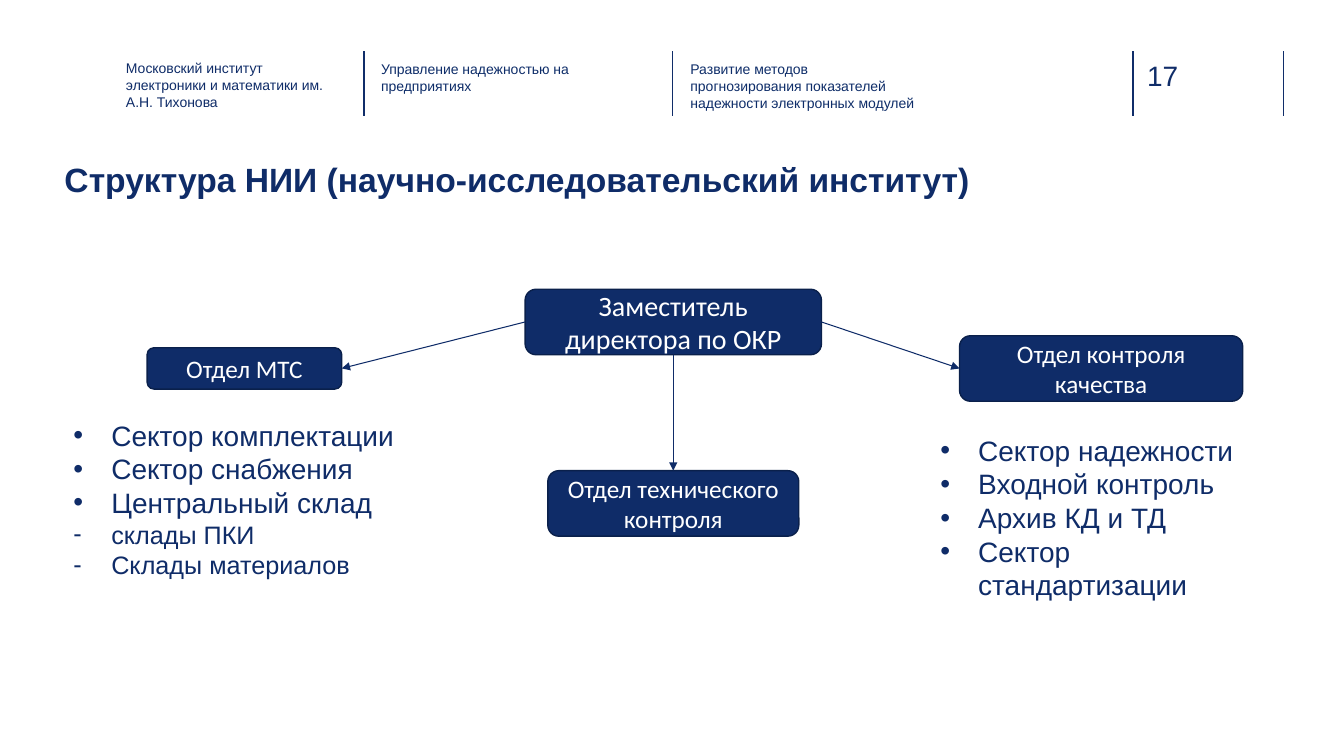
"""Build a slide with the structure of a research institute."""
from dataclasses import dataclass

from lxml import etree
from pptx import Presentation
from pptx import util as u
from pptx.dml import color
from pptx.enum import shapes, text
from pptx.oxml import ns

NAVY, RULE, HEAD, EDGE, WHITE = "0F2C68", "102D69", "0E2D69", "0A204B", "FFFFFF"
HANG = 27


@dataclass
class Area:
    left: float
    top: float
    width: float
    height: float

    def points(self) -> list:
        return [u.Pt(n) for n in (self.left, self.top, self.width, self.height)]


@dataclass
class Label:
    area: Area
    words: str
    size: float
    tint: str = NAVY
    bold: bool = False


@dataclass
class Unit:
    area: Area
    words: str
    size: float = 18


@dataclass
class Item:
    words: str
    mark: str = "•"
    size: float = 20


@dataclass
class Roster:
    area: Area
    items: list


@dataclass
class Link:
    goal: int
    start: int
    end: int


LABELS = [
    Label(Area(819.4, 41.8, 52.6, 24.5), "17", 20, RULE),
    Label(Area(46.1, 113.8, 859.7, 55.4),
          "Структура НИИ (научно-исследовательский институт)", 24, bold=True),
    Label(Area(90, 42.5, 149.8, 32.4),
          "Московский институт электроники и математики им. А.Н. Тихонова", 10),
    Label(Area(272.2, 43.2, 162.7, 32.4),
          "Управление надежностью на предприятиях", 10, HEAD),
    Label(Area(493.2, 43.2, 162.7, 32.4),
          "Развитие методов прогнозирования показателей надежности "
          "электронных модулей", 10, HEAD),
]
UNITS = [
    Unit(Area(375.1, 206.6, 211.7, 46.8), "Заместитель директора по ОКР", 20),
    Unit(Area(391.3, 336.2, 179.3, 46.8), "Отдел технического контроля"),
    Unit(Area(685.4, 239.8, 202.3, 46.8), "Отдел контроля качества"),
    Unit(Area(105.1, 248.4, 139, 29.5), "Отдел МТС"),
]
LINKS = [Link(3, 1, 3), Link(1, 2, 0), Link(2, 3, 1)]
ROSTERS = [
    Roster(Area(664.6, 306, 257.8, 128.2), [
        Item("Сектор надежности"), Item("Входной контроль"),
        Item("Архив КД и ТД"), Item("Сектор стандартизации")]),
    Roster(Area(45.4, 295.2, 257.8, 128.2), [
        Item("Сектор комплектации"), Item("Сектор снабжения"),
        Item("Центральный склад"), Item("склады ПКИ", "-", 18),
        Item("Склады материалов", "-", 18)]),
]


def apply(target, values: dict) -> None:
    for name, value in values.items():
        setattr(target, name, value)


def paint(fmt, tint: str) -> None:
    fmt.rgb = color.RGBColor.from_string(tint)


def add(parent, tag: str, **attrs: str):
    return etree.SubElement(parent, ns.qn(tag), attrs)


def write(para, words: str, size: float, tint: str,
          face: str = "Arial", bold: bool = False) -> None:
    run = para.add_run()
    run.text = words
    apply(run.font, {"name": face, "size": u.Pt(size), "bold": bold})
    paint(run.font.color, tint)


def frame(shape, side: float, edge: float, anchor):
    body = shape.text_frame
    apply(body, {
        "word_wrap": True, "vertical_anchor": anchor,
        "margin_left": u.Pt(side), "margin_right": u.Pt(side),
        "margin_top": u.Pt(edge), "margin_bottom": u.Pt(edge)})
    return body


def draw_label(slide, label: Label) -> None:
    box = slide.shapes.add_textbox(*label.area.points())
    body = frame(box, 0, 0, text.MSO_ANCHOR.TOP)
    write(body.paragraphs[0], label.words, label.size, label.tint, bold=label.bold)


def draw_unit(slide, unit: Unit):
    box = slide.shapes.add_shape(
        shapes.MSO_SHAPE.ROUNDED_RECTANGLE, *unit.area.points())
    box.shadow.inherit = False
    box.fill.solid()
    paint(box.fill.fore_color, NAVY)
    paint(box.line.color, EDGE)
    box.line.width = u.Pt(1)
    para = frame(box, 7.2, 3.6, text.MSO_ANCHOR.MIDDLE).paragraphs[0]
    para.alignment = text.PP_ALIGN.CENTER
    write(para, unit.words, unit.size, WHITE, "Calibri")
    return box


def draw_roster(slide, roster: Roster) -> None:
    box = slide.shapes.add_textbox(*roster.area.points())
    body = frame(box, 7.2, 3.6, text.MSO_ANCHOR.TOP)
    for i, item in enumerate(roster.items):
        para = body.add_paragraph() if i else body.paragraphs[0]
        props = para._p.get_or_add_pPr()
        props.set("marL", str(u.Pt(HANG)))
        props.set("indent", str(-u.Pt(HANG)))
        add(add(props, "a:buClr"), "a:srgbClr", val=NAVY)
        add(props, "a:buFont", typeface="Arial")
        add(props, "a:buChar", char=item.mark)
        write(para, item.words, item.size, NAVY)


def draw_line(slide, ends: tuple, tint: str, width: float):
    line = slide.shapes.add_connector(
        shapes.MSO_CONNECTOR.STRAIGHT, *[u.Pt(n) for n in ends])
    paint(line.line.color, tint)
    line.line.width = u.Pt(width)
    add(line._element.spPr, "a:effectLst")
    return line


def draw_link(slide, boxes: list, link: Link) -> None:
    line = draw_line(slide, (0, 0, 0, 0), NAVY, 0.75)
    line.begin_connect(boxes[0], link.start)
    line.end_connect(boxes[link.goal], link.end)
    add(line._element.spPr.find(ns.qn("a:ln")), "a:tailEnd", type="triangle")


def main() -> None:
    deck = Presentation()
    apply(deck, {"slide_width": u.Pt(960), "slide_height": u.Pt(540)})
    slide = deck.slides.add_slide(deck.slide_layouts[6])
    for x in (260, 480.2, 809.3, 916.6):
        draw_line(slide, (x, 36.7, x, 82.8), RULE, 1)
    for label in LABELS:
        draw_label(slide, label)
    boxes = [draw_unit(slide, unit) for unit in UNITS]
    for link in LINKS:
        draw_link(slide, boxes, link)
    for roster in ROSTERS:
        draw_roster(slide, roster)
    deck.save("out.pptx")


if __name__ == "__main__":
    main()
